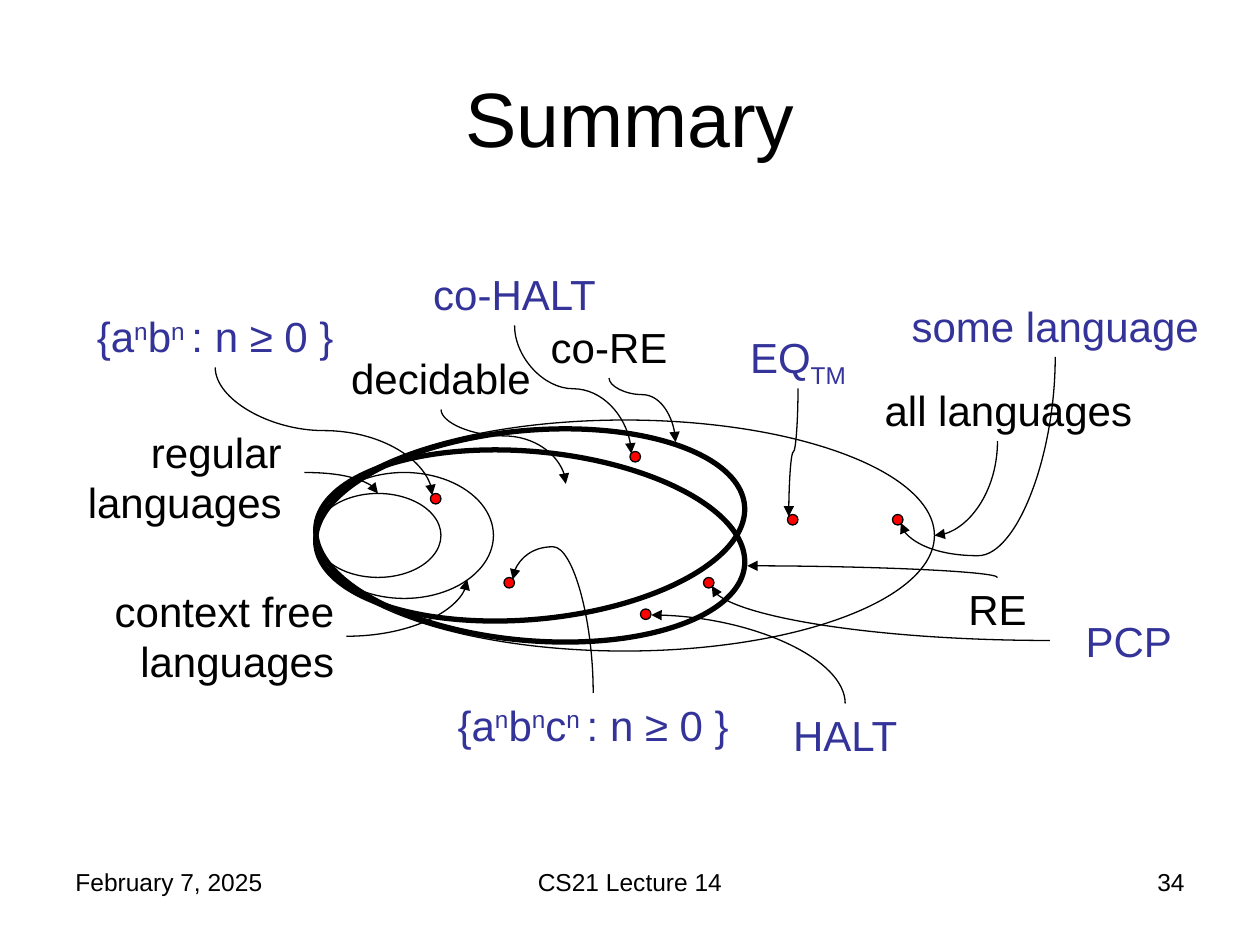
from lxml import etree
from pptx import Presentation
from pptx import util as u
from pptx.dml.color import RGBColor
from pptx.enum import shapes, text
from pptx.oxml.ns import qn

Pt = u.Pt
BLACK, BLUE, RED = "000000", "333399", "FF0000"
LEFT, CENTER, RIGHT = text.PP_ALIGN.LEFT, text.PP_ALIGN.CENTER, text.PP_ALIGN.RIGHT
LABEL_HEIGHT, DOT_SIZE = 36, 6

CLASSES = [
    (162, 90, 354, 132, 0, 0.75),
    (162, 120, 102, 72, 0, 0.75),
    (162, 132, 72, 48, 0, 0.75),
    (162, 108, 246, 108, 5.2, 3),
    (162, 96, 246, 108, -5.2, 3),
]
CLASS_LABELS = [
    (18, 90, 132, 65, RIGHT, "regular languages"),
    (12, 181, 168, 65, RIGHT, "context free languages"),
    (468, 66, 168, LABEL_HEIGHT, RIGHT, "all languages"),
    (150, 48, 168, LABEL_HEIGHT, CENTER, "decidable"),
    (468, 180, 168, LABEL_HEIGHT, CENTER, "RE"),
    (246, 30, 168, LABEL_HEIGHT, CENTER, "co-RE"),
]
LANGUAGE_LABELS = [
    (0, 24, 210, [("{a", 0), ("n", 30), ("b", 0), ("n ", 30), (": n ≥ 0 }", 0)]),
    (216, 246, 210, [("{a", 0), ("n", 30), ("b", 0), ("n", 30), ("c", 0),
                     ("n ", 30), (": n ≥ 0 }", 0)]),
    (480, 18, 210, [("some language", 0)]),
    (420, 252, 90, [("HALT", 0)]),
    (204, 0, 144, [("co-HALT", 0)]),
    (582, 198, 90, [("PCP", 0)]),
    (366, 36, 144, [("EQ", 0), ("TM", -25)]),
]
DOTS = [(228, 132), (270, 180), (492, 144), (348, 198),
        (342, 108), (384, 180), (432, 144)]
SIDEWAYS_ARROWS = [
    (156, 120, 198, 132),
    (180, 213.6, 249, 181.2),
    (582, 216, 388.8, 184.8),
]
UPRIGHT_ARROWS = [
    (552, 102, 516, 156, None),
    (552, 180, 409, 173.3, None),
    (465, 252, 354.2, 201.4, None),
    (234, 84, 305.3, 126.5, 0.355),
    (105, 60, 229, 133, 0.494),
    (321, 246, 275, 181.2, 1.29),
    (585, 54, 496.8, 148.8, 1.198),
    (330, 66, 368, 102.7, 0.259),
    (276, 36, 342.7, 109.2, 0.494),
    (438, 72, 432.7, 145.2, 0.494),
]


def color(value):
    """Turn a hex string into a colour."""
    return RGBColor.from_string(value)


def add_text(slide, box, runs, size, fill=BLACK, align=CENTER, anchor=text.MSO_ANCHOR.TOP):
    """Add a text box from (text, baseline percent) runs."""
    frame = slide.shapes.add_textbox(*map(Pt, box)).text_frame
    frame.word_wrap = True
    frame.vertical_anchor = anchor
    paragraph = frame.paragraphs[0]
    paragraph.alignment = align
    for words, baseline in runs:
        run = paragraph.add_run()
        run.text = words
        run.font.name = "Arial"
        run.font.size = Pt(size)
        run.font.color.rgb = color(fill)
        if baseline:
            run.font._element.set("baseline", str(baseline * 1000))


def add_ellipse(slide, box, width=0.75, rotation=0, fill=None):
    """Add an outlined ellipse, filled if a colour is given."""
    shape = slide.shapes.add_shape(shapes.MSO_SHAPE.OVAL, *map(Pt, box))
    shape.shadow.inherit = False
    shape.rotation = rotation
    shape.line.color.rgb = color(BLACK)
    shape.line.width = Pt(width)
    if fill:
        shape.fill.solid()
        shape.fill.fore_color.rgb = color(fill)
    else:
        shape.fill.background()


def add_arrow(slide, x1, y1, x2, y2, upright=False, bend=None):
    """Add a curved arrow that leaves its start sideways or upright."""
    ends = (x1, y1, x2, y2)
    if upright:
        middle_x, middle_y = (x1 + x2) / 2, (y1 + y2) / 2
        half_width, half_height = abs(y2 - y1) / 2, abs(x2 - x1) / 2
        ends = (middle_x - half_width, middle_y - half_height,
                middle_x + half_width, middle_y + half_height)
    arrow = slide.shapes.add_connector(shapes.MSO_CONNECTOR.CURVE, *map(Pt, ends))
    arrow.line.color.rgb = color(BLACK)
    arrow.line.width = Pt(0.75)
    properties = arrow._element.spPr
    if upright:
        transform = properties.find(qn("a:xfrm"))
        transform.set("rot", str((270 if x2 > x1 else 90) * 60000))
        if (x2 - x1) * (y2 - y1) > 0:
            transform.set("flipH", "1")
    geometry = properties.find(qn("a:prstGeom"))
    if bend is None:
        geometry.set("prst", "curvedConnector2")
    else:
        guide = etree.SubElement(geometry.find(qn("a:avLst")), qn("a:gd"))
        guide.set("name", "adj1")
        guide.set("fmla", f"val {round(bend * 100000)}")
    etree.SubElement(properties.find(qn("a:ln")), qn("a:tailEnd")).set("type", "triangle")
    etree.SubElement(properties, qn("a:effectLst"))


def add_diagram(slide, left, top):
    """Draw the nested language classes with their labels and members."""
    for x, y, width, height, rotation, weight in CLASSES:
        add_ellipse(slide, (left + x, top + y, width, height), weight, rotation)
    for x, y, width, height, align, words in CLASS_LABELS:
        add_text(slide, (left + x, top + y, width, height), [(words, 0)], 24, align=align)
    for x, y, width, runs in LANGUAGE_LABELS:
        add_text(slide, (left + x, top + y, width, LABEL_HEIGHT), runs, 24, BLUE)
    for x, y in DOTS:
        add_ellipse(slide, (left + x, top + y, DOT_SIZE, DOT_SIZE), fill=RED)
    for x1, y1, x2, y2 in SIDEWAYS_ARROWS:
        add_arrow(slide, left + x1, top + y1, left + x2, top + y2)
    for x1, y1, x2, y2, bend in UPRIGHT_ARROWS:
        add_arrow(slide, left + x1, top + y1, left + x2, top + y2, True, bend)


def add_footer(slide, left, top, width, height):
    """Place date, lecture and slide number across the footer."""
    side, center = 168, 228
    parts = [
        (0, side, LEFT, "February 7, 2025"),
        ((width - center) / 2, center, CENTER, "CS21 Lecture 14"),
        (width - side, side, RIGHT, "34"),
    ]
    for x, part_width, align, words in parts:
        add_text(slide, (left + x, top, part_width, height), [(words, 0)], 14, align=align)


def main():
    """Build and save the slide."""
    presentation = Presentation()
    presentation.slide_width, presentation.slide_height = Pt(720), Pt(540)
    slide = presentation.slides.add_slide(presentation.slide_layouts[6])
    add_footer(slide, 36, 492, 648, 37.5)
    add_text(slide, (36, 21.6, 648, 90), [("Summary", 0)], 44,
             anchor=text.MSO_ANCHOR.MIDDLE)
    add_diagram(slide, 18, 150)
    presentation.save("out.pptx")


if __name__ == "__main__":
    main()
